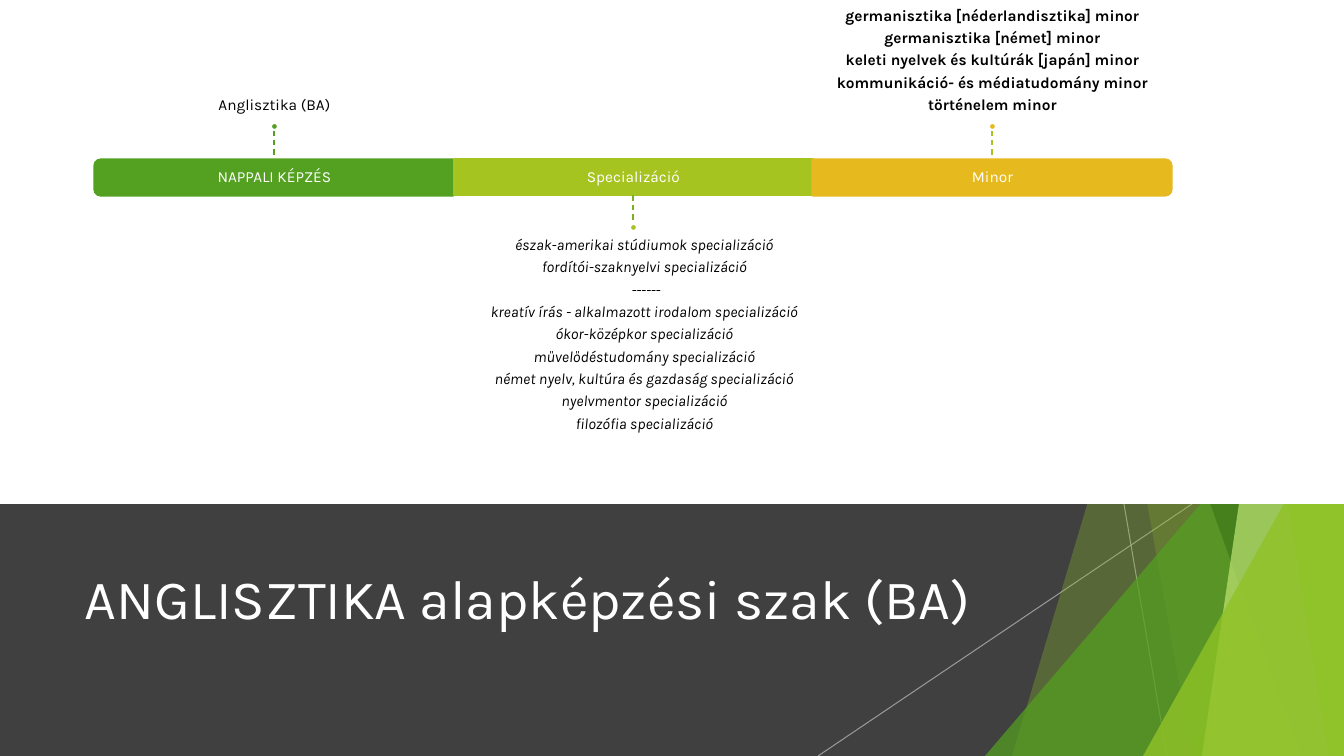
from dataclasses import dataclass

from pptx import Presentation
from pptx import util as u
from pptx.dml.color import RGBColor
from pptx.enum import dml, shapes, text
from pptx.oxml.ns import qn
from lxml import etree


@dataclass(frozen=True)
class Theme:
    """Colours, font and type sizes of the deck."""
    font: str = "Karla"
    title: float = 39.6
    body: float = 11
    white: str = "FFFFFF"
    black: str = "000000"
    dark: str = "404040"
    hairline: str = "BFBFBF"
    green: str = "54A021"
    bright: str = "90C226"
    forest: str = "3F7819"
    pale: str = "C0E474"
    lime: str = "A5C41F"
    leaf: str = "79B220"
    gold: str = "E6B91E"


THEME = Theme()
WIDTH, HEIGHT, SPLIT = 1344, 756, 504
KIND = shapes.MSO_SHAPE
ANCHOR = text.MSO_ANCHOR

BANDS = [
    ([(1238, 0), (1344, 0), (1344, 756), (1012, 756)], THEME.bright, 30),
    ([(1058, 0), (1344, 0), (1344, 756), (1192, 756)], THEME.bright, 20),
    ((985, 336), THEME.green, 72),
    ([(1029, 0), (1344, 0), (1344, 756), (1301, 756)], THEME.forest, 70),
    ([(1313, 0), (1344, 0), (1344, 756), (1202, 756)], THEME.pale, 70),
    ([(1206, 0), (1344, 0), (1344, 756), (1329, 756)], THEME.bright, 65),
    ((1143, 396), THEME.bright, 80),
]

STAGES = [
    ("NAPPALI KÉPZÉS", THEME.green, THEME.green, ["Anglisztika (BA)"], {}),
    ("Specializáció", THEME.lime, THEME.leaf, [
        "észak-amerikai stúdiumok specializáció",
        "fordítói-szaknyelvi specializáció",
        " ------",
        "kreatív írás - alkalmazott irodalom specializáció",
        "ókor-középkor specializáció",
        "művelődéstudomány specializáció",
        "német nyelv, kultúra és gazdaság specializáció",
        "nyelvmentor specializáció",
        "filozófia specializáció",
    ], {"italic": True}),
    ("Minor", THEME.gold, THEME.lime, [
        "germanisztika [néderlandisztika] minor",
        "germanisztika [német] minor",
        "keleti nyelvek és kultúrák [japán] minor",
        "kommunikáció- és médiatudomány minor",
        "történelem minor",
    ], {"bold": True}),
]


def px(length):
    """Turn whole pixels into EMU."""
    return u.Emu(round(length * 914400 / 100.8))


def set_alpha(element, percent):
    """Make the first solid colour below the element translucent."""
    colour = next(element.iter(qn("a:srgbClr")))
    etree.SubElement(colour, qn("a:alpha")).set("val", str(percent * 1000))


def paint(shape, fill, outline=None, alpha=100):
    """Give a shape its fill and outline, without a shadow."""
    shape.shadow.inherit = False
    shape.fill.solid()
    shape.fill.fore_color.rgb = RGBColor.from_string(fill)
    if alpha < 100:
        set_alpha(shape.fill._xPr, alpha)
    if outline:
        shape.line.color.rgb = RGBColor.from_string(outline)
        shape.line.width = u.Pt(1.5)
    else:
        shape.line.fill.background()
    return shape


def add_block(page, kind, box, fill, outline=None, alpha=100):
    """Add a painted preset shape in the given box."""
    shape = page.shapes.add_shape(kind, *map(px, box))
    return paint(shape, fill, outline, alpha)


def add_line(page, start, end, colour, width, alpha=100, dashed=False):
    """Add a straight line between two points."""
    line = page.shapes.add_connector(
        shapes.MSO_CONNECTOR.STRAIGHT, *map(px, start + end))
    line.line.color.rgb = RGBColor.from_string(colour)
    line.line.width = u.Pt(width)
    if dashed:
        line.line.dash_style = dml.MSO_LINE.DASH
    properties = line._element.spPr
    if alpha < 100:
        set_alpha(properties, alpha)
    etree.SubElement(properties, qn("a:effectLst"))


def add_text(page, box, lines, size, colour, anchor, insets,
             align=text.PP_ALIGN.CENTER, bold=False, italic=False, spacing=0.9, after=4.1):
    """Add a text box with one paragraph for each line."""
    frame = page.shapes.add_textbox(*map(px, box)).text_frame
    frame.word_wrap = True
    frame.vertical_anchor = anchor
    (frame.margin_left, frame.margin_top,
     frame.margin_right, frame.margin_bottom) = map(px, insets)
    for index, line in enumerate(lines):
        para = frame.paragraphs[0] if index == 0 else frame.add_paragraph()
        para.text = line
        para.alignment = align
        para.line_spacing = spacing
        para.space_after = u.Pt(after)
        font = para.font
        font.name, font.size, font.bold, font.italic = THEME.font, u.Pt(size), bold, italic
        font.color.rgb = RGBColor.from_string(colour)


def draw_bands(page):
    """Draw the translucent green bands at the right edge."""
    for x in (1124, 1192):
        end = 1167 if x == 1124 else 818
        add_line(page, (x, SPLIT), (end, HEIGHT), THEME.hairline, 0.75, alpha=70)
    for outline, colour, alpha in BANDS:
        if isinstance(outline, tuple):
            left, top = outline
            box = (left, top, WIDTH - left, HEIGHT - top)
            corner = add_block(page, KIND.ISOSCELES_TRIANGLE, box, colour, alpha=alpha)
            corner.adjustments[0] = 1
        else:
            points = [(px(x), px(y)) for x, y in outline]
            builder = page.shapes.build_freeform(*points[0])
            builder.add_line_segments(points[1:], close=True)
            paint(builder.convert_to_shape(), colour, alpha=alpha)


def draw_footer(page, box):
    """Draw the dark panel with its bands and the title."""
    left, top, _, _ = box
    add_block(page, KIND.RECTANGLE, box, THEME.dark)
    draw_bands(page)
    add_text(page, (left + 75, top + 21, 948, 145), ["ANGLISZTIKA alapképzési szak (BA)"],
             THEME.title, THEME.white, ANCHOR.MIDDLE, (10, 5, 10, 5),
             align=text.PP_ALIGN.LEFT, spacing=1.0, after=0)


def draw_bar(page, box, colour, turn):
    """Draw one bar segment, rounded at the outer end when turned."""
    left, top, width, height = box
    if not turn:
        return add_block(page, KIND.RECTANGLE, box, colour, colour)
    shift = (width - height) // 2
    upright = (left + shift, top - shift, height, width)
    bar = add_block(page, KIND.ROUND_2_SAME_RECTANGLE, upright, colour, colour)
    bar.rotation = turn
    return bar


def draw_stage(page, box, stage, turn, below):
    """Draw a segment with its label, dashed stem, dot and details."""
    label, colour, stem_colour, details, style = stage
    left, top, width, height = box
    centre, stem, dot, text_width = left + width // 2, 29, 7, 599
    draw_bar(page, box, colour, turn)
    add_text(page, box, [label], THEME.body, THEME.white, ANCHOR.MIDDLE, (9, 9, 9, 9))
    if below:
        start, end = top + height, top + height + stem
        dot_top = end
        area = (centre + 11 - text_width // 2, end + 4, text_width, 126)
        anchor, insets = ANCHOR.TOP, (0, 9, 0, 0)
    else:
        start, end = top - stem, top
        dot_top = start - dot
        area = (centre - text_width // 2, 0, text_width, dot_top)
        anchor, insets = ANCHOR.BOTTOM, (0, 0, 0, 9)
    add_text(page, area, details, THEME.body, THEME.black, anchor, insets, **style)
    add_line(page, (centre, start), (centre, end), stem_colour, 1, dashed=True)
    add_block(page, KIND.OVAL, (centre - dot // 2, dot_top, dot, dot), colour, THEME.white)


def draw_timeline(page, box):
    """Draw the white panel and its three stages in a row."""
    add_block(page, KIND.RECTANGLE, box, THEME.white)
    left, top, width = box[0] + 95, box[1] + 159, 359
    for index, (stage, turn) in enumerate(zip(STAGES, (270, 0, 90))):
        segment = (left + index * width, top, width, 36)
        draw_stage(page, segment, stage, turn, below=index == 1)


def main():
    """Build and save the deck."""
    deck = Presentation()
    deck.slide_width, deck.slide_height = px(WIDTH), px(HEIGHT)
    page = deck.slides.add_slide(deck.slide_layouts[6])
    draw_footer(page, (0, SPLIT, WIDTH, HEIGHT - SPLIT))
    draw_timeline(page, (0, 0, WIDTH, SPLIT))
    deck.save("out.pptx")


if __name__ == "__main__":
    main()
